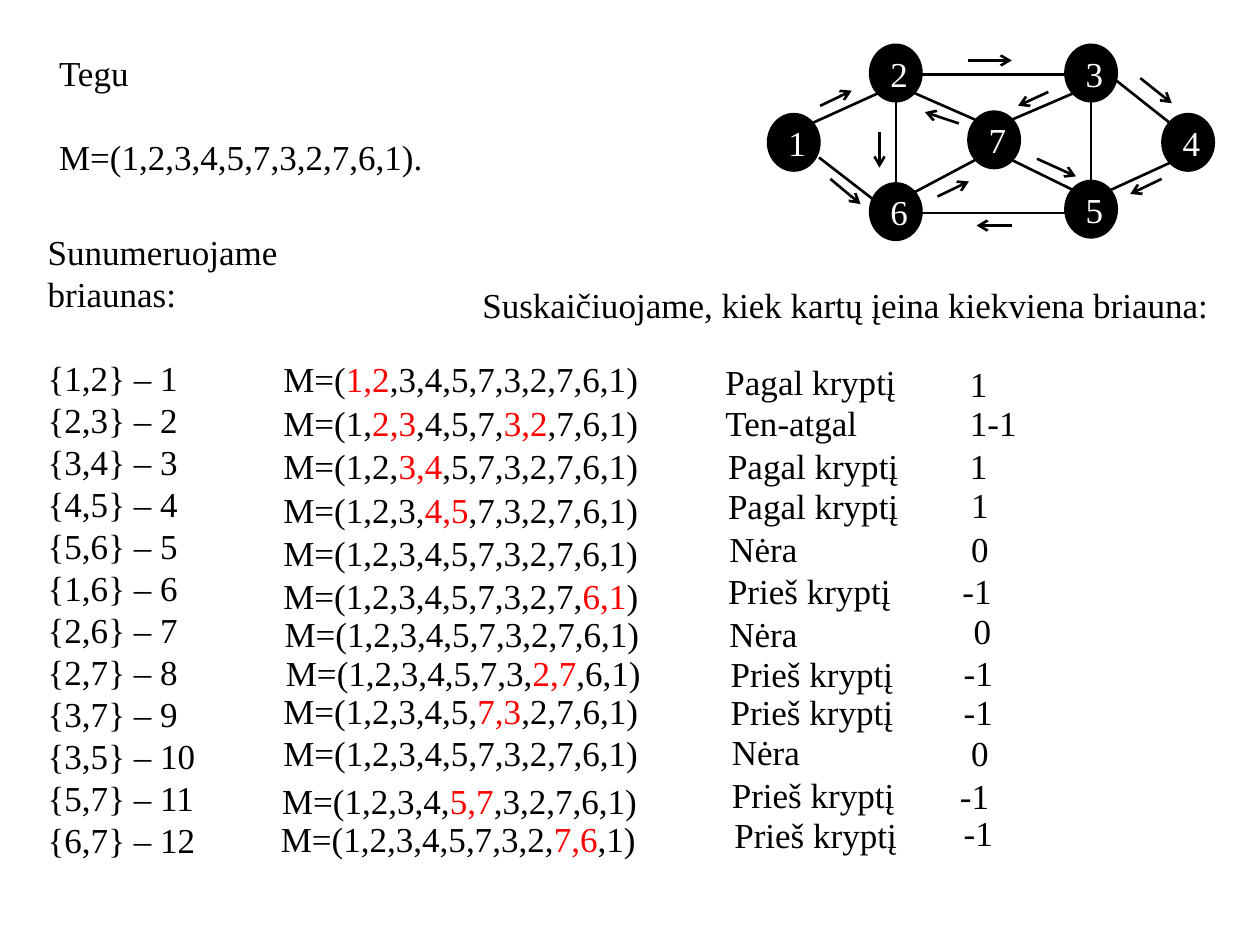
from itertools import groupby

from lxml import etree
from pptx import Presentation
from pptx.dml.color import RGBColor
from pptx.enum.shapes import MSO_CONNECTOR, MSO_SHAPE
from pptx.enum.text import MSO_ANCHOR, MSO_AUTO_SIZE, PP_ALIGN
from pptx.oxml.ns import qn
from pptx.util import Inches, Pt

LINE = MSO_CONNECTOR.STRAIGHT
OVAL = MSO_SHAPE.OVAL
MIDDLE = MSO_ANCHOR.MIDDLE
CENTER = PP_ALIGN.CENTER
FIT_SHAPE = MSO_AUTO_SIZE.SHAPE_TO_FIT_TEXT

BLACK = RGBColor(0, 0, 0)
WHITE = RGBColor(255, 255, 255)
RED = RGBColor(255, 0, 0)
FONT = "Times New Roman"
SIZE = Pt(20)
LEADING = Pt(24)

WALK = [1, 2, 3, 4, 5, 7, 3, 2, 7, 6, 1]
WALK_TEXT = ",".join(map(str, WALK))
FORWARD, BACKWARD, BOTH, NONE = "Pagal kryptį", "Prieš kryptį", "Ten-atgal", "Nėra"

# Edge, then (left, top) of its walk, verdict and count, within the count area
EDGES = [
    ((1, 2), (0.02, 0), FORWARD, (3.53, 0.02), "1", (5.47, 0.04)),
    ((2, 3), (0.02, 0.35), BOTH, (3.53, 0.35), "1-1", (5.47, 0.35)),
    ((3, 4), (0.02, 0.69), FORWARD, (3.55, 0.69), "1", (5.47, 0.69)),
    ((4, 5), (0.02, 1.04), FORWARD, (3.55, 1.01), "1", (5.48, 1)),
    ((5, 6), (0.02, 1.38), NONE, (3.56, 1.35), "0", (5.48, 1.35)),
    ((1, 6), (0.02, 1.72), BACKWARD, (3.55, 1.68), "-1", (5.41, 1.68)),
    ((2, 6), (0.03, 2.02), NONE, (3.56, 2.02), "0", (5.5, 2)),
    ((2, 7), (0.04, 2.33), BACKWARD, (3.57, 2.34), "-1", (5.42, 2.33)),
    ((3, 7), (0.02, 2.63), BACKWARD, (3.57, 2.64), "-1", (5.42, 2.64)),
    ((3, 5), (0.02, 2.97), NONE, (3.58, 2.96), "0", (5.48, 2.97)),
    ((5, 7), (0.01, 3.35), BACKWARD, (3.58, 3.3), "-1", (5.39, 3.31)),
    ((6, 7), (0, 3.65), BACKWARD, (3.6, 3.62), "-1", (5.42, 3.6)),
]

# Graph coordinates are measured from the graph's top left corner
NODE_W, NODE_H = 0.4, 0.44
NODES = {2: (0.81, 0), 3: (2.36, 0), 6: (0.81, 1.1), 5: (2.36, 1.08),
         4: (3.13, 0.55), 1: (0, 0.55), 7: (1.59, 0.53)}
GRAPH_EDGES = [
    (1.21, 0.23, 2.36, 0.23), (1.01, 1.1, 1.01, 0.45), (2.56, 1.08, 2.56, 0.42),
    (1.21, 1.33, 2.36, 1.33), (1.16, 0.38, 1.64, 0.59), (2.76, 0.28, 3.19, 0.62),
    (1.15, 1.17, 1.64, 0.91), (1.93, 0.59, 2.42, 0.38), (1.93, 0.91, 2.42, 1.15),
    (0.4, 0.89, 0.84, 1.23), (0.34, 0.62, 0.87, 0.38), (2.71, 1.15, 3.19, 0.93),
]
ARROWS = [
    (0.41, 0.48, 0.66, 0.36), (1.58, 0.12, 1.93, 0.12), (2.95, 0.26, 3.2, 0.46),
    (3.12, 1.06, 2.87, 1.18), (1.93, 1.43, 1.65, 1.43), (0.49, 1.06, 0.73, 1.26),
    (0.88, 0.69, 0.88, 0.97), (1.34, 1.2, 1.59, 1.08), (1.51, 0.62, 1.24, 0.53),
    (2.22, 0.37, 1.98, 0.48), (2.13, 0.9, 2.44, 1.04),
]


def format_text(tf, color=BLACK):
    for p in tf.paragraphs:
        p.line_spacing = LEADING
        for r in p.runs:
            r.font.name = FONT
            r.font.size = SIZE
            r.font.color.rgb = color


def add_text(s, text, left, top, width, height=0.44):
    box = s.shapes.add_textbox(Inches(left), Inches(top), Inches(width), Inches(height))
    tf = box.text_frame
    tf.word_wrap = True
    tf.auto_size = FIT_SHAPE
    tf.text = text
    format_text(tf)
    return tf


def add_line(group, left, top, ends, arrow=False):
    x1, y1, x2, y2 = ends
    line = group.shapes.add_connector(LINE, Inches(left + x1), Inches(top + y1),
                                      Inches(left + x2), Inches(top + y2))
    line.line.color.rgb = BLACK
    line.line.width = Pt(1.5)
    sp_pr = line._element.spPr
    if arrow:
        etree.SubElement(sp_pr.find(qn("a:ln")), qn("a:tailEnd"), type="arrow")
    etree.SubElement(sp_pr, qn("a:effectLst"))


def add_graph(s, left, top):
    group = s.shapes.add_group_shape()
    for number, (x, y) in NODES.items():
        node = group.shapes.add_shape(OVAL, Inches(left + x), Inches(top + y),
                                      Inches(NODE_W), Inches(NODE_H))
        node.shadow.inherit = False
        node.fill.solid()
        node.fill.fore_color.rgb = BLACK
        node.line.color.rgb = BLACK
        node.line.width = Pt(2)
        tf = node.text_frame
        tf.text = str(number)
        tf.vertical_anchor = MIDDLE
        tf.paragraphs[0].alignment = CENTER
        format_text(tf, WHITE)
    for ends in GRAPH_EDGES:
        add_line(group, left, top, ends)
    for ends in ARROWS:
        add_line(group, left, top, ends, arrow=True)


def add_walk(s, edge, left, top):
    """Write the walk with each passage along the edge in red."""
    marked = set()
    for i in range(len(WALK) - 1):
        if set(WALK[i:i + 2]) == set(edge):
            marked.update(range(2 * i, 2 * i + 3))
    text = f"M=({WALK_TEXT})"
    tf = add_text(s, "", left, top, 3.15)
    p = tf.paragraphs[0]
    colors = []
    for is_marked, part in groupby(enumerate(text, -3), lambda c: c[0] in marked):
        p.add_run().text = "".join(char for _, char in part)
        colors.append(RED if is_marked else BLACK)
    format_text(tf)
    for r, color in zip(p.runs, colors):
        r.font.color.rgb = color


def add_edge_list(s, left, top):
    lines = [f"{{{a},{b}}} – {i}" for i, ((a, b), *_) in enumerate(EDGES, 1)]
    tf = add_text(s, "\n".join(["Sunumeruojame briaunas:"] + lines), left, top, 2.28, 5.49)
    tf.paragraphs[1].space_before = LEADING


def add_counts(s, left, top):
    for edge, walk_at, verdict, verdict_at, count, count_at in EDGES:
        add_walk(s, edge, left + walk_at[0], top + walk_at[1])
        for text, (x, y) in ((verdict, verdict_at), (count, count_at)):
            add_text(s, text, left + x, top + y, 1.57)


def main():
    prs = Presentation()
    prs.slide_width, prs.slide_height = Inches(10), Inches(7.5)
    s = prs.slides.add_slide(prs.slide_layouts[6])
    add_graph(s, 6.1, 0.36)
    intro = add_text(s, f"Tegu\nM=({WALK_TEXT}).", 0.37, 0.36, 5.02, 1.11)
    intro.paragraphs[1].space_before = LEADING
    add_text(s, "Suskaičiuojame, kiek kartų įeina kiekviena briauna:", 3.73, 2.2, 6.14)
    add_edge_list(s, 0.28, 1.78)
    add_counts(s, 2.13, 2.79)
    prs.save("out.pptx")


if __name__ == "__main__":
    main()
